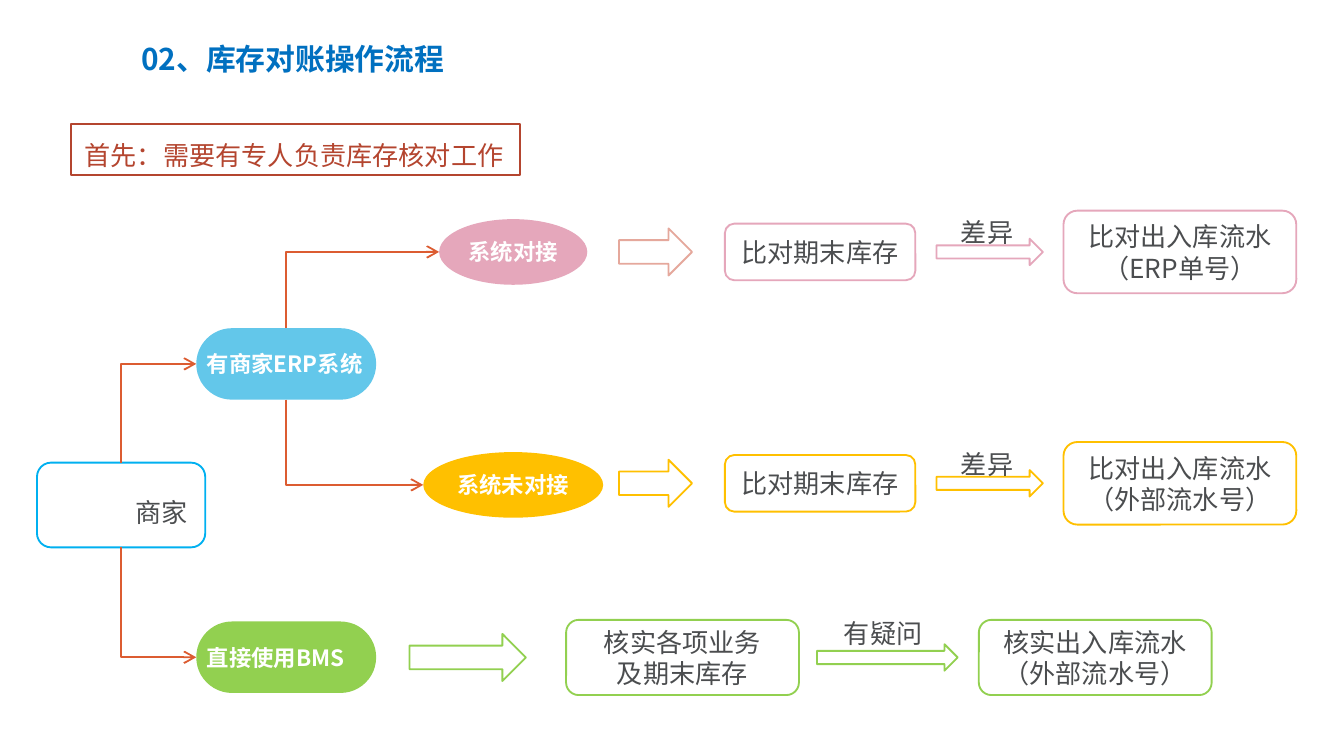
import dataclasses

import lxml.etree
import pptx
import pptx.dml.color
import pptx.enum.shapes
import pptx.enum.text
import pptx.oxml.ns
import pptx.util

Cm = pptx.util.Cm
SHAPE = pptx.enum.shapes.MSO_SHAPE
ALIGN = pptx.enum.text.PP_ALIGN
ANCHOR = pptx.enum.text.MSO_ANCHOR
TOP, LEFT, BOTTOM = 0, 1, 2
ELLIPSE_LEFT = 2  # an ellipse has eight connection sites


@dataclasses.dataclass(frozen=True)
class Theme:
    font: str = "Noto Sans CJK SC"
    label_font: str = "Arial"
    title_size: int = 16
    body_size: int = 14
    node_size: int = 12
    line_width: int = 1
    title: str = "0070C0"
    notice: str = "B4452F"
    body: str = "4B4D4F"
    white: str = "FFFFFF"
    connector: str = "DC5C31"
    merchant: str = "00B0F0"
    erp: str = "63C7EA"
    linked: str = "E5A7BB"
    linked_arrow: str = "E5A89C"
    unlinked: str = "FFC000"
    direct: str = "92D050"


def rgb(value):
    return pptx.dml.color.RGBColor.from_string(value)


def add_child(parent, tag, **attributes):
    child = lxml.etree.SubElement(parent, pptx.oxml.ns.qn(tag))
    for name, value in attributes.items():
        child.set(name, value)
    return child


def write_text(shape, text, *, size, color, font, bold=False, align=ALIGN.LEFT,
               anchor=ANCHOR.TOP, spacing=None, insets=None, wrap=True, grow=False):
    """Fill a shape with text, one paragraph a line; insets are (horizontal, vertical) in cm."""
    frame = shape.text_frame
    frame.word_wrap = wrap
    frame.vertical_anchor = anchor
    if grow:
        frame.auto_size = pptx.enum.text.MSO_AUTO_SIZE.SHAPE_TO_FIT_TEXT
    if insets:
        frame.margin_left = frame.margin_right = Cm(insets[0])
        frame.margin_top = frame.margin_bottom = Cm(insets[1])
    for index, line in enumerate(text.split("\n")):
        paragraph = frame.paragraphs[0] if index == 0 else frame.add_paragraph()
        paragraph.alignment = align
        if spacing:
            paragraph.line_spacing = spacing
        run = paragraph.add_run()
        run.text = line
        run.font.size = pptx.util.Pt(size)
        run.font.bold = bold
        run.font.color.rgb = rgb(color)
        run.font.name = font
        add_child(run.font._element, "a:ea", typeface=Theme.font)


class FlowSlide:
    def __init__(self, slide, theme):
        self.slide = slide
        self.theme = theme

    def shape(self, kind, left, top, width, height, *, fill=None, line=None):
        shape = self.slide.shapes.add_shape(kind, Cm(left), Cm(top), Cm(width), Cm(height))
        shape.shadow.inherit = False
        if fill:
            shape.fill.solid()
            shape.fill.fore_color.rgb = rgb(fill)
        else:
            shape.fill.background()
        if line:
            shape.line.color.rgb = rgb(line)
            shape.line.width = pptx.util.Pt(self.theme.line_width)
        else:
            shape.line.fill.background()
        return shape

    def title(self, text, left, top, width, height):
        box = self.slide.shapes.add_textbox(Cm(left), Cm(top), Cm(width), Cm(height))
        write_text(box, text, size=self.theme.title_size, color=self.theme.title,
                   font=self.theme.font, bold=True, insets=(0.18, 0.1), grow=True)

    def notice(self, text, left, top, width, height):
        box = self.shape(SHAPE.RECTANGLE, left, top, width, height, line=self.theme.notice)
        write_text(box, text, size=self.theme.body_size, color=self.theme.notice,
                   font=self.theme.label_font, spacing=1.3, wrap=False, grow=True)

    def label(self, text, left, top, width, height=0.97, font=None):
        box = self.slide.shapes.add_textbox(Cm(left), Cm(top), Cm(width), Cm(height))
        write_text(box, text, size=self.theme.body_size, color=self.theme.body,
                   font=font or self.theme.label_font, spacing=1.3, wrap=False, grow=True)

    def node(self, kind, text, left, top, width, height, fill, align):
        node = self.shape(kind, left, top, width, height, fill=fill)
        write_text(node, text, size=self.theme.node_size, color=self.theme.white,
                   font=self.theme.font, bold=True, align=align,
                   anchor=ANCHOR.MIDDLE, insets=(0, 0))
        return node

    def pill(self, text, top, fill):
        pill = self.node(SHAPE.ROUNDED_RECTANGLE, text, 3.71, top, 3.4, 1.35, fill, ALIGN.LEFT)
        pill.adjustments[0] = 0.5
        return pill

    def ellipse(self, text, left, top, width, fill):
        return self.node(SHAPE.OVAL, text, left, top, width, 1.24, fill, ALIGN.CENTER)

    def step(self, text, left, middle, width, height, color):
        step = self.shape(SHAPE.ROUNDED_RECTANGLE, left, middle - height / 2, width, height,
                          line=color)
        write_text(step, text, size=self.theme.body_size, color=self.theme.body,
                   font=self.theme.font, align=ALIGN.CENTER, anchor=ANCHOR.MIDDLE)

    def arrow(self, left, middle, width, height, color):
        self.shape(SHAPE.RIGHT_ARROW, left, middle - height / 2, width, height, line=color)

    def branch(self, source, target, target_site=LEFT):
        """Join source to the left of target: vertical first, then one bend to the right."""
        begin_x = source.left + source.width // 2
        end_x, end_y = target.left, target.top + target.height // 2
        upward = end_y < source.top
        begin_y = source.top if upward else source.top + source.height
        connector = self.slide.shapes.add_connector(
            pptx.enum.shapes.MSO_CONNECTOR.ELBOW, begin_x, begin_y, end_x, end_y)
        connector.begin_connect(source, TOP if upward else BOTTOM)
        connector.end_connect(target, target_site)
        # The one-bend preset runs sideways first, so its frame is turned a quarter.
        width, height = abs(end_y - begin_y), end_x - begin_x
        connector.left = (begin_x + end_x - width) // 2
        connector.top = (begin_y + end_y - height) // 2
        connector.width, connector.height = width, height
        properties = connector._element.spPr
        transform = properties.find(pptx.oxml.ns.qn("a:xfrm"))
        transform.set("rot", str((90 if upward else 270) * 60000))
        transform.set("flipH", "1")
        transform.set("flipV", "1" if upward else "0")
        properties.find(pptx.oxml.ns.qn("a:prstGeom")).set("prst", "bentConnector2")
        connector.line.color.rgb = rgb(self.theme.connector)
        connector.line.width = pptx.util.Pt(self.theme.line_width)
        add_child(connector.line._get_or_add_ln(), "a:tailEnd", type="arrow")
        add_child(properties, "a:effectLst")


def main():
    presentation = pptx.Presentation()
    presentation.slide_width, presentation.slide_height = Cm(25.4), Cm(14.28)
    theme = Theme()
    flow = FlowSlide(presentation.slides.add_slide(presentation.slide_layouts[6]), theme)

    flow.title("02、库存对账操作流程", 2.49, 0.66, 6.2, 0.89)
    flow.notice("首先：需要有专人负责库存核对工作", 1.35, 2.34, 8.48, 0.97)

    erp = flow.pill("有商家ERP系统", 6.2, theme.erp)
    direct = flow.pill("直接使用BMS", 11.74, theme.direct)
    merchant = flow.shape(SHAPE.ROUNDED_RECTANGLE, 0.7, 8.74, 3.18, 1.6, line=theme.merchant)
    flow.label("商家", 2.31, 9.07, 1.5, 1.04, font=theme.font)
    linked = flow.ellipse("系统对接", 8.3, 4.14, 2.8, theme.linked)
    unlinked = flow.ellipse("系统未对接", 8, 8.54, 3.4, theme.unlinked)

    flow.branch(merchant, erp)
    flow.branch(merchant, direct)
    flow.branch(erp, linked, ELLIPSE_LEFT)
    flow.branch(erp, unlinked, ELLIPSE_LEFT)

    for middle, color, arrow_color, order_type in (
        (4.76, theme.linked, theme.linked_arrow, "（ERP单号）"),
        (9.13, theme.unlinked, theme.unlinked, "（外部流水号）"),
    ):
        flow.arrow(11.7, middle, 1.38, 0.89, arrow_color)
        flow.step("比对期末库存", 13.7, middle, 3.6, 1.07, color)
        flow.arrow(17.7, middle, 2.01, 0.5, color)
        flow.label("差异", 17.91, middle - 0.97, 1.5)
        flow.step("比对出入库流水\n" + order_type, 20.1, middle, 4.4, 1.56, color)

    middle = 12.42
    flow.arrow(7.74, middle, 2.2, 0.89, theme.direct)
    flow.step("核实各项业务\n及期末库存", 10.7, middle, 4.4, 1.42, theme.direct)
    flow.arrow(15.44, middle, 2.66, 0.5, theme.direct)
    flow.label("有疑问", 15.7, middle - 1.06, 2)
    flow.step("核实出入库流水\n（外部流水号）", 18.5, middle, 4.4, 1.42, theme.direct)

    presentation.save("out.pptx")


if __name__ == "__main__":
    main()
